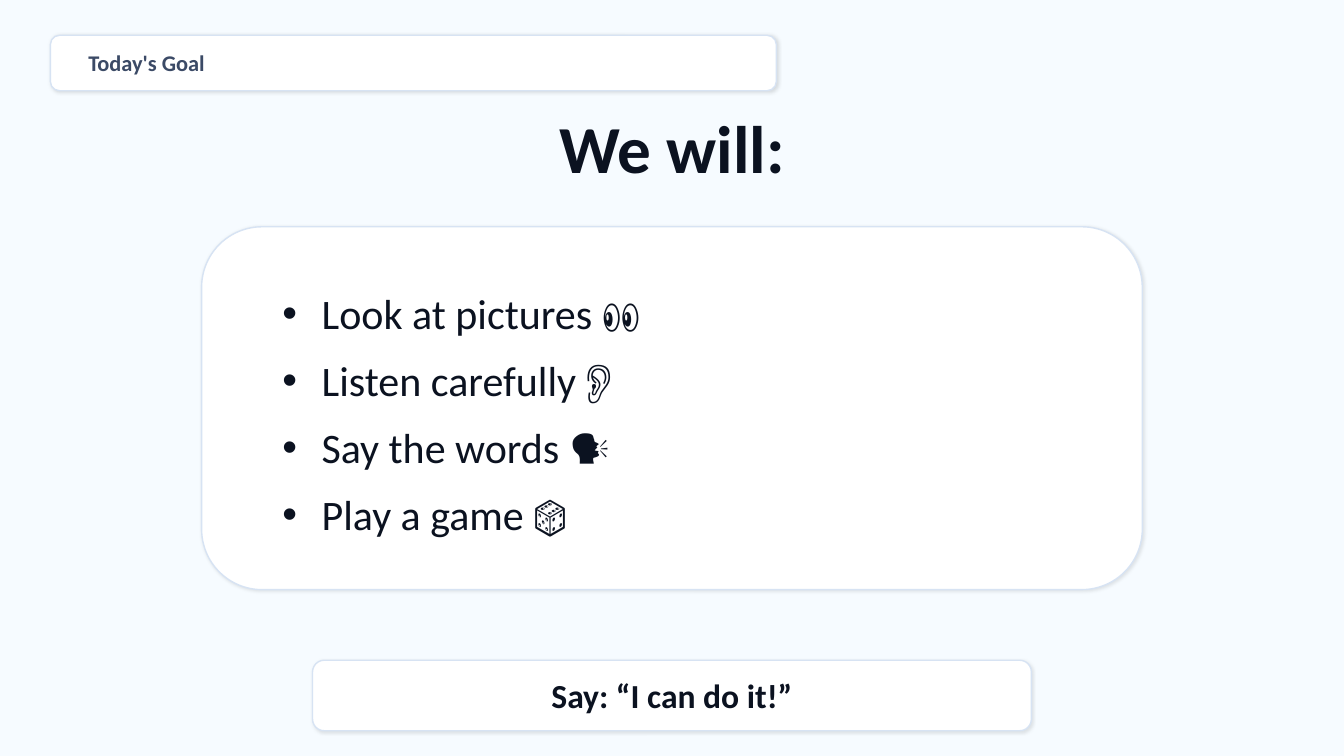
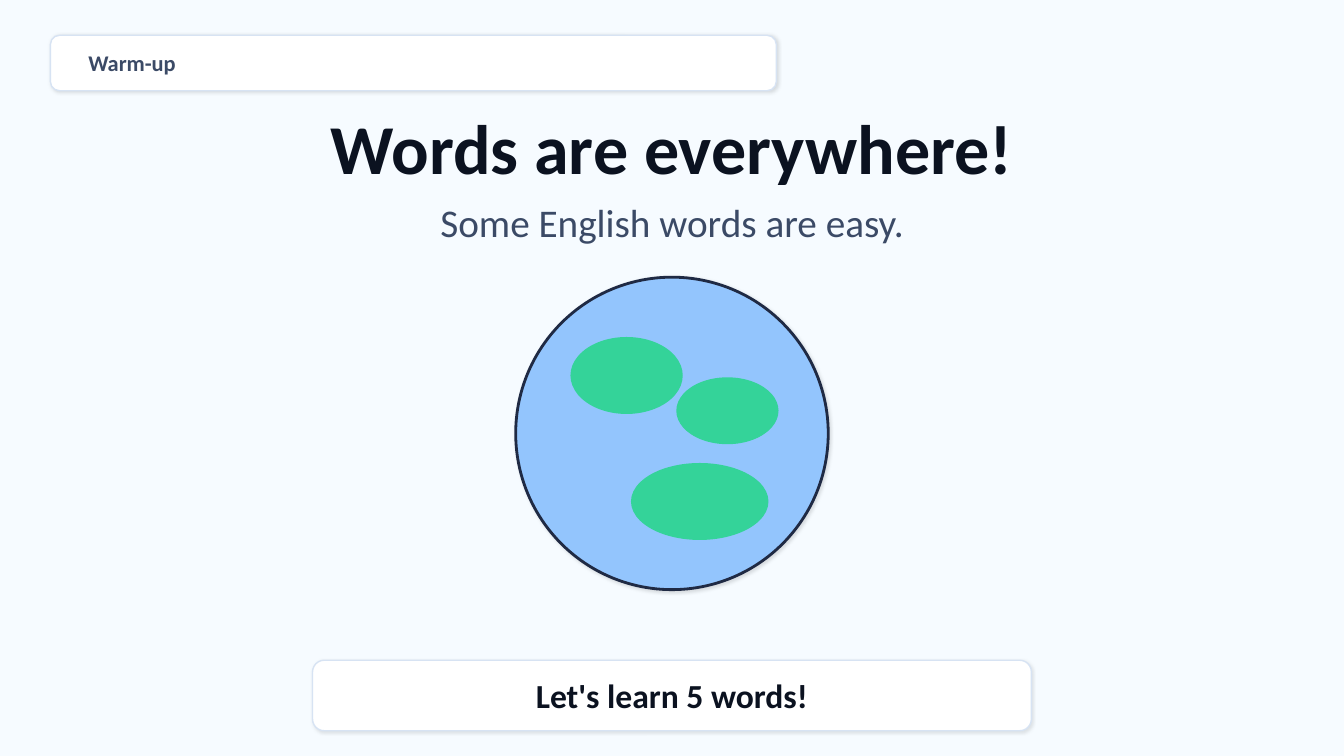
from lxml.etree import SubElement
from pptx import Presentation
from pptx.dml.color import RGBColor
from pptx.enum.shapes import MSO_SHAPE
from pptx.enum.text import MSO_ANCHOR, MSO_AUTO_SIZE, PP_ALIGN
from pptx.oxml.ns import qn
from pptx.util import Inches, Pt

COLORS = {
    "background": "F6FBFF",
    "card": "FFFFFF",
    "border": "D7E3F3",
    "ink": "0B1220",
    "muted": "3B4A66",
    "ocean": "93C5FD",
    "outline": "1F2A44",
    "land": "34D399",
}
FONT = "Calibri"
SLIDE_W, SLIDE_H = 13.33, 7.5
TITLE_ONLY, TITLE_AND_CONTENT = 5, 1


def rgb(name):
    return RGBColor.from_string(COLORS[name])


def centered(width):
    return (SLIDE_W - width) / 2


def place(sp, left, top, width, height):
    sp.left, sp.top = Inches(left), Inches(top)
    sp.width, sp.height = Inches(width), Inches(height)


def add_shadow(sp, opacity, blur, distance):
    """Cast a soft black shadow to the lower right; opacity is in percent."""
    effects = sp._element.spPr.find(qn("a:effectLst"))
    shadow = SubElement(effects, qn("a:outerShdw"), blurRad=str(Pt(blur)),
                        dist=str(Pt(distance)), dir=str(45 * 60000),
                        algn="tl", rotWithShape="0")
    color = SubElement(shadow, qn("a:srgbClr"), val="000000")
    SubElement(color, qn("a:alpha"), val=str(opacity * 1000))


def add_figure(slide, kind, box, fill, line, line_width=1, shadow=None):
    sp = slide.shapes.add_shape(kind, *map(Inches, box))
    sp.fill.solid()
    sp.fill.fore_color.rgb = rgb(fill)
    sp.line.color.rgb = rgb(line)
    sp.line.width = Pt(line_width)
    sp.shadow.inherit = False
    if shadow:
        add_shadow(sp, *shadow)
    return sp


def add_card(slide, box, shadow):
    return add_figure(slide, MSO_SHAPE.ROUNDED_RECTANGLE, box,
                      "card", "border", shadow=shadow)


def set_text(sp, text, size, color="ink", bold=False,
             align=PP_ALIGN.CENTER, anchor=MSO_ANCHOR.MIDDLE):
    tf = sp.text_frame
    tf.text = text
    tf.word_wrap = True
    tf.auto_size = MSO_AUTO_SIZE.NONE
    tf.vertical_anchor = anchor
    for p in tf.paragraphs:
        p.alignment = align
        for r in p.runs:
            r.font.name = FONT
            r.font.size = Pt(size)
            r.font.bold = bold
            r.font.color.rgb = rgb(color)


def add_label(slide, text):
    sp = add_card(slide, (0.5, 0.35, 7.2, 0.55), (12, 2.5, 1))
    set_text(sp, text, 16, "muted", bold=True, align=PP_ALIGN.LEFT)
    sp.text_frame.margin_left = Inches(0.35)


def add_prompt(slide, text):
    width = 7.13
    sp = add_card(slide, (centered(width), 6.55, width, 0.7), (10, 2.2, 0.8))
    set_text(sp, text, 24, bold=True)


def set_title(slide, text, size):
    width = 11.33
    place(slide.shapes.title, centered(width), 1.05, width, 0.8)
    set_text(slide.shapes.title, text, size, bold=True)


def add_subtitle(slide, text):
    width = 11.33
    sp = slide.shapes.add_textbox(0, 0, 0, 0)
    place(sp, centered(width), 1.9, width, 0.6)
    set_text(sp, text, 28, "muted")


def add_goal_list(slide, goals):
    width = 9.33
    add_card(slide, (centered(width), 2.25, width, 3.6), (10, 2.2, 1))
    body = slide.placeholders[1]
    place(body, 2.7, 2.8, 7.93, 2.5)
    set_text(body, "\n".join(goals), 30, align=PP_ALIGN.LEFT,
             anchor=MSO_ANCHOR.TOP)
    for p in body.text_frame.paragraphs:
        p.space_before, p.space_after = Pt(0), Pt(12)
        pPr = p._p.get_or_add_pPr()
        pPr.set("marL", str(Inches(0.39)))
        pPr.set("indent", str(-Inches(0.39)))
    # The list must lie in front of its card.
    slide.shapes._spTree.append(body._element)


def add_globe(slide):
    size = 3.1
    left, top = centered(size), 2.75
    add_figure(slide, MSO_SHAPE.OVAL, (left, top, size, size),
               "ocean", "outline", 2, (12, 2.2, 1))
    # Offsets from the globe's corner, then width and height
    for dx, dy, width, height in ((0.55, 0.6, 1.1, 0.75),
                                  (1.6, 1, 1, 0.65),
                                  (1.15, 1.85, 1.35, 0.75)):
        add_figure(slide, MSO_SHAPE.OVAL,
                   (left + dx, top + dy, width, height), "land", "land")


def add_lesson_slide(prs, layout, label, title, title_size, prompt):
    """Add a slide with the label, title and prompt that all slides share."""
    slide = prs.slides.add_slide(prs.slide_layouts[layout])
    add_label(slide, label)
    set_title(slide, title, title_size)
    add_prompt(slide, prompt)
    return slide


def main():
    prs = Presentation()
    prs.slide_width, prs.slide_height = Inches(SLIDE_W), Inches(SLIDE_H)
    background = prs.slide_master.background.fill
    background.solid()
    background.fore_color.rgb = rgb("background")

    goal = add_lesson_slide(prs, TITLE_AND_CONTENT, "Today's Goal",
                            "We will:", 48, "Say: “I can do it!”")
    add_goal_list(goal, ["Look at pictures 👀", "Listen carefully 👂",
                         "Say the words 🗣️", "Play a game 🎲"])

    warm_up = add_lesson_slide(prs, TITLE_ONLY, "Warm-up",
                               "Words are everywhere!", 50,
                               "Let's learn 5 words!")
    add_subtitle(warm_up, "Some English words are easy.")
    add_globe(warm_up)

    prs.save("out.pptx")


if __name__ == "__main__":
    main()
